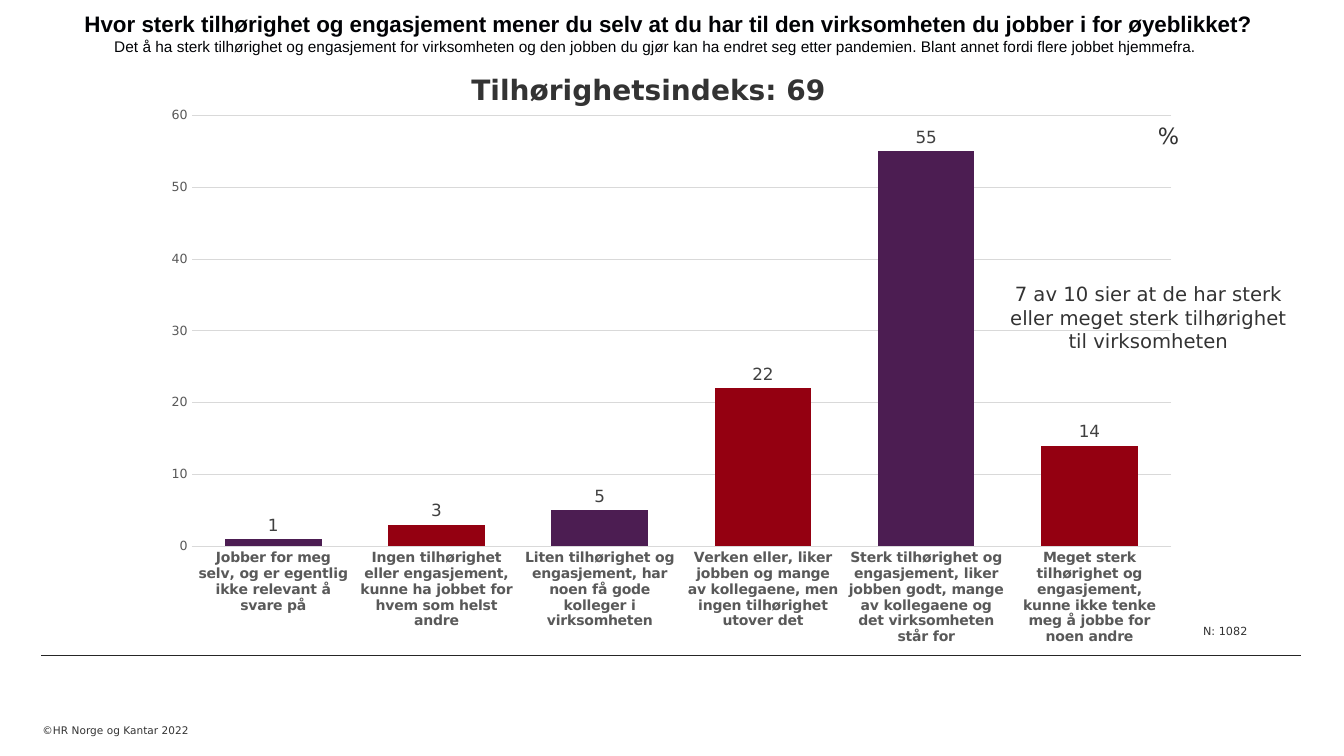
import pptx
import pptx.chart.data
import pptx.dml.color
import pptx.enum.chart
import pptx.enum.shapes
import pptx.enum.text
import pptx.oxml
import pptx.oxml.ns
import pptx.util
from pptx.util import Cm, Pt

COLORS = {
    "heading": "010205", "text": "333333", "rule": "262626", "grid": "D9D9D9",
    "axis": "595959", "label": "404040", "purple": "4C1D52", "red": "940011",
}
ANSWERS = {
    "Jobber for meg selv, og er egentlig ikke relevant å svare på": 1,
    "Ingen tilhørighet eller engasjement, kunne ha jobbet for hvem som helst andre": 3,
    "Liten tilhørighet og engasjement, har noen få gode kolleger i virksomheten": 5,
    "Verken eller, liker jobben og mange av kollegaene, men ingen tilhørighet utover det": 22,
    "Sterk tilhørighet og engasjement, liker jobben godt, mange av kollegaene og det virksomheten står for": 55,
    "Meget sterk tilhørighet og engasjement, kunne ikke tenke meg å jobbe for noen andre": 14,
}


def rgb(color):
    return pptx.dml.color.RGBColor.from_string(COLORS[color])


class SurveySlide:
    """Holds the body font and the slide being filled."""

    font = "DejaVu Sans"

    def __init__(self, deck):
        self.slide = deck.slides.add_slide(deck.slide_layouts[6])

    def style(self, font, size, color, bold=False, name=None):
        font.name = name or self.font
        font.size = Pt(size)
        font.bold = bold
        font.color.rgb = rgb(color)

    def text(self, box, lines, color="text", name=None, wrap=True, centred=False):
        """Add a text box; lines holds (wording, size, bold) per paragraph."""
        frame = self.slide.shapes.add_textbox(*map(Cm, box)).text_frame
        frame.word_wrap = wrap
        frame.auto_size = pptx.enum.text.MSO_AUTO_SIZE.SHAPE_TO_FIT_TEXT
        frame.text = "\n".join(wording for wording, _, _ in lines)
        for paragraph, (_, size, bold) in zip(frame.paragraphs, lines):
            if centred:
                paragraph.alignment = pptx.enum.text.PP_ALIGN.CENTER
            for run in paragraph.runs:
                self.style(run.font, size, color, bold, name)
        return frame

    def footer(self, box, wording):
        frame = self.text(box, [(wording, 7.5, False)])
        frame.auto_size = pptx.enum.text.MSO_AUTO_SIZE.NONE
        frame.vertical_anchor = pptx.enum.text.MSO_ANCHOR.BOTTOM
        frame.margin_left = frame.margin_top = frame.margin_right = 0
        frame.margin_bottom = Cm(0.48)

    def rule(self, left, right, y):
        line = self.slide.shapes.add_connector(
            pptx.enum.shapes.MSO_CONNECTOR.STRAIGHT, Cm(left), Cm(y), Cm(right), Cm(y))
        line.line.color.rgb = rgb("rule")
        line.line.width = Pt(0.75)
        line._element.spPr.append(pptx.oxml.parse_xml(
            f'<a:effectLst {pptx.oxml.ns.nsdecls("a")}/>'))

    def columns(self, box, answers, plot):
        """Add a column chart; plot gives the inner area as shares of the chart."""
        data = pptx.chart.data.CategoryChartData(number_format="0")
        data.categories = list(answers)
        data.add_series("Prosent", list(answers.values()))
        chart = self.slide.shapes.add_chart(
            pptx.enum.chart.XL_CHART_TYPE.COLUMN_CLUSTERED, *map(Cm, box), data).chart
        chart.has_legend = chart.has_title = False
        chart.font.name, chart.font.size = self.font, Pt(10)

        bars = chart.plots[0]
        bars.gap_width, bars.overlap, bars.vary_by_categories = 69, -27, False
        series = bars.series[0]
        series.format.fill.solid()
        series.format.fill.fore_color.rgb = rgb("purple")
        for index in range(1, len(answers), 2):
            fill = series.points[index].format.fill
            fill.solid()
            fill.fore_color.rgb = rgb("red")
        bars.has_data_labels = True
        labels = bars.data_labels
        labels.show_value = True
        labels.number_format, labels.number_format_is_linked = "#,##0", False
        labels.position = pptx.enum.chart.XL_LABEL_POSITION.OUTSIDE_END
        self.style(labels.font, 12, "label")

        answer_axis, percent_axis = chart.category_axis, chart.value_axis
        for axis, size, bold in ((answer_axis, 10, True), (percent_axis, 9, False)):
            axis.major_tick_mark = axis.minor_tick_mark = pptx.enum.chart.XL_TICK_MARK.NONE
            self.style(axis.tick_labels.font, size, "axis", bold)
        percent_axis.minimum_scale, percent_axis.maximum_scale = 0, 60
        percent_axis.major_unit = 10
        percent_axis.tick_labels.number_format = "0"
        percent_axis.tick_labels.number_format_is_linked = False
        percent_axis.format.line.fill.background()
        for line in (answer_axis.format.line, percent_axis.major_gridlines.format.line):
            line.color.rgb = rgb("grid")
            line.width = Pt(0.75)

        area = chart._chartSpace.chart.plotArea
        for layout in area.findall(pptx.oxml.ns.qn("c:layout")):
            area.remove(layout)
        shares = "".join(f'<c:{key} val="{share}"/>' for key, share in zip("xywh", plot))
        area.insert(0, pptx.oxml.parse_xml(
            f'<c:layout {pptx.oxml.ns.nsdecls("c")}><c:manualLayout>'
            '<c:layoutTarget val="inner"/><c:xMode val="edge"/><c:yMode val="edge"/>'
            f'{shares}</c:manualLayout></c:layout>'))


def main():
    deck = pptx.Presentation()
    deck.slide_width, deck.slide_height = Cm(33.87), Cm(19.05)
    survey = SurveySlide(deck)
    survey.footer((1.07, 17.83, 5.99, 1.22), "©HR Norge og Kantar 2022")
    survey.rule(1.04, 32.79, 16.51)
    survey.columns((3.78, 2.49, 26.26, 14.1), ANSWERS, (0.04, 0.03, 0.94, 0.77))
    survey.text((28.93, 2.95, 1.12, 0.94), [("%", 16, False)], wrap=False)
    survey.text((0.2, 0.13, 33.3, 1.88), [
        ("Hvor sterk tilhørighet og engasjement mener du selv at du har til den "
         "virksomheten du jobber i for øyeblikket?", 16, True),
        ("Det å ha sterk tilhørighet og engasjement for virksomheten og den jobben du gjør "
         "kan ha endret seg etter pandemien. Blant annet fordi flere jobbet hjemmefra.\t",
         11, False),
    ], color="heading", name="Arial", centred=True)
    survey.text((25.17, 6.99, 7.54, 2.06), [
        ("7 av 10 sier at de har sterk eller meget sterk tilhørighet til virksomheten",
         14, False)], centred=True)
    survey.text((30.07, 15.62, 1.68, 0.61), [("N: 1082", 8, False)], wrap=False)
    survey.text((11.63, 1.7, 9.47, 1.12), [("Tilhørighetsindeks: 69", 20, True)], wrap=False)
    deck.save("out.pptx")


if __name__ == "__main__":
    main()
